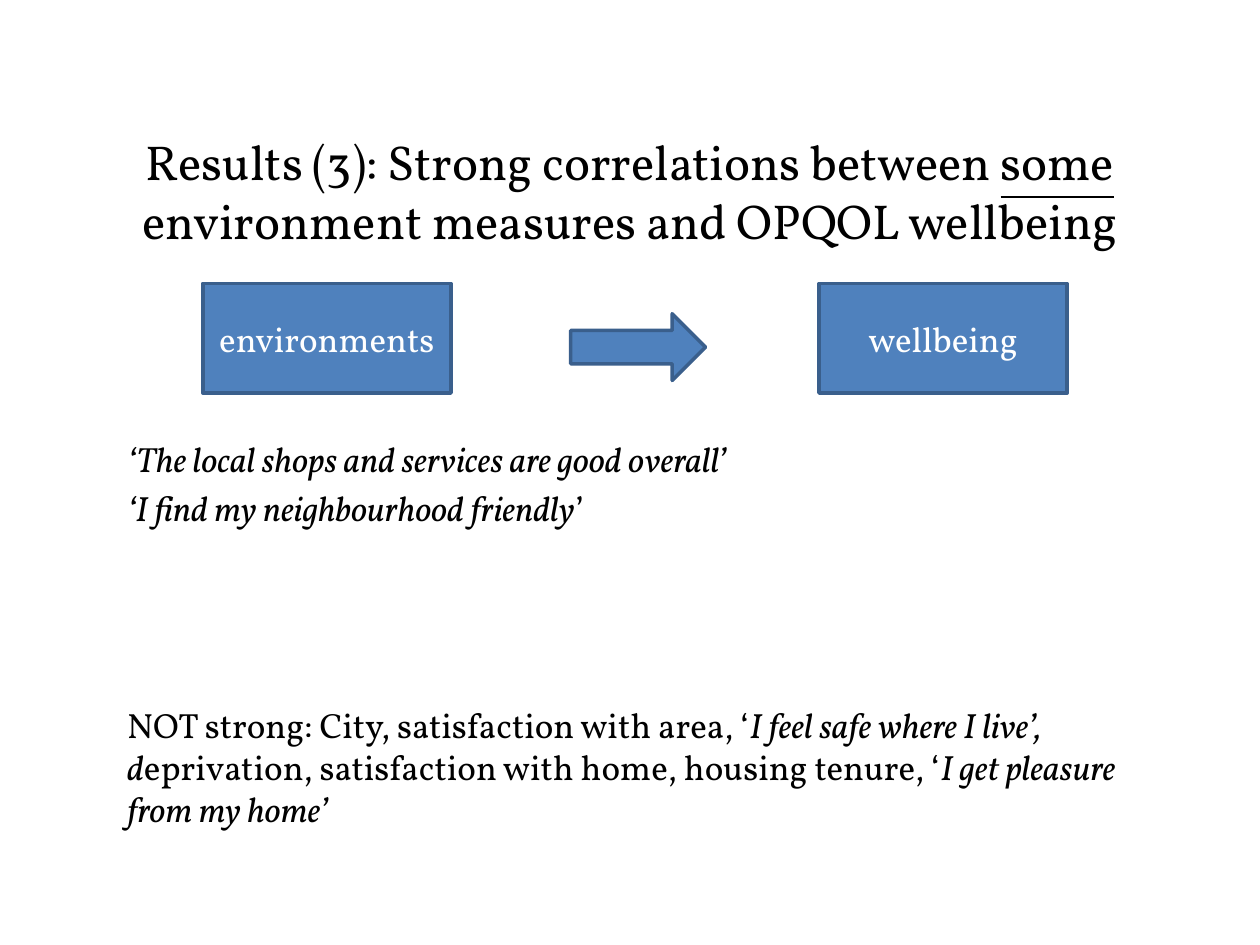
from pptx import Presentation
from pptx.dml.color import RGBColor
from pptx.enum.shapes import MSO_SHAPE
from pptx.enum.text import MSO_ANCHOR, PP_ALIGN
from pptx.util import Inches, Pt

BLACK = RGBColor(0x00, 0x00, 0x00)
WHITE = RGBColor(0xFF, 0xFF, 0xFF)
BLUE = RGBColor(0x4F, 0x81, 0xBD)
DARK_BLUE = RGBColor(0x3A, 0x5F, 0x8C)


class SlideBuilder:
    font_name = "Vollkorn"
    title_size = Pt(28)
    body_size = Pt(20)

    def __init__(self, slide):
        self.slide = slide

    def style_run(self, run, size, color):
        run.font.name = self.font_name
        run.font.size = size
        run.font.color.rgb = color

    def title(self, left, top, width, height, parts):
        heading = self.slide.shapes.title
        heading.left, heading.top = Inches(left), Inches(top)
        heading.width, heading.height = Inches(width), Inches(height)
        frame = heading.text_frame
        frame.word_wrap = True
        frame.vertical_anchor = MSO_ANCHOR.MIDDLE
        paragraph = frame.paragraphs[0]
        paragraph.alignment = PP_ALIGN.CENTER
        for text, underlined in parts:
            run = paragraph.add_run()
            run.text = text
            self.style_run(run, self.title_size, BLACK)
            run.font.underline = underlined

    def body(self, left, top, width, height, paragraphs):
        box = self.slide.shapes.add_textbox(
            Inches(left), Inches(top), Inches(width), Inches(height))
        frame = box.text_frame
        frame.word_wrap = True
        for index, (space_before, parts) in enumerate(paragraphs):
            paragraph = frame.add_paragraph() if index else frame.paragraphs[0]
            paragraph.space_before = Pt(space_before)
            for text, italic in parts:
                run = paragraph.add_run()
                run.text = text
                self.style_run(run, self.body_size, BLACK)
                run.font.italic = italic

    def block(self, kind, left, top, width, height, label=""):
        block = self.slide.shapes.add_shape(
            kind, Inches(left), Inches(top), Inches(width), Inches(height))
        block.shadow.inherit = False
        block.fill.solid()
        block.fill.fore_color.rgb = BLUE
        block.line.color.rgb = DARK_BLUE
        block.line.width = Pt(2)
        if label:
            frame = block.text_frame
            frame.text = label
            frame.vertical_anchor = MSO_ANCHOR.MIDDLE
            paragraph = frame.paragraphs[0]
            paragraph.alignment = PP_ALIGN.CENTER
            self.style_run(paragraph.runs[0], self.body_size, WHITE)


def main():
    presentation = Presentation()
    presentation.slide_width = Inches(10)
    presentation.slide_height = Inches(7.5)
    title_only = presentation.slide_layouts[5]
    builder = SlideBuilder(presentation.slides.add_slide(title_only))

    builder.title(0.75, 0.76, 8.5, 1.5, [
        ("Results (3): Strong correlations between ", False),
        ("some", True),
        (" environment measures and OPQOL wellbeing", False),
    ])
    builder.body(0.91, 3.42, 8.11, 3.32, [
        (0, [("‘The local shops and services are good overall’", True)]),
        (4, [("‘I find my neighbourhood friendly", True), ("’", False)]),
        (100, [
            ("NOT strong: City, satisfaction with area, ‘", False),
            ("I feel safe where I live’, d", True),
            ("eprivation, satisfaction with home, housing tenure, ‘", False),
            ("I get pleasure from my home’", True),
        ]),
    ])
    builder.block(MSO_SHAPE.RIGHT_ARROW, 4.53, 2.49, 1.07, 0.53)
    for left, label in ((1.61, "environments"), (6.5, "wellbeing")):
        builder.block(MSO_SHAPE.FLOWCHART_PROCESS, left, 2.25, 1.97, 0.87, label)

    presentation.save("out.pptx")


if __name__ == "__main__":
    main()
